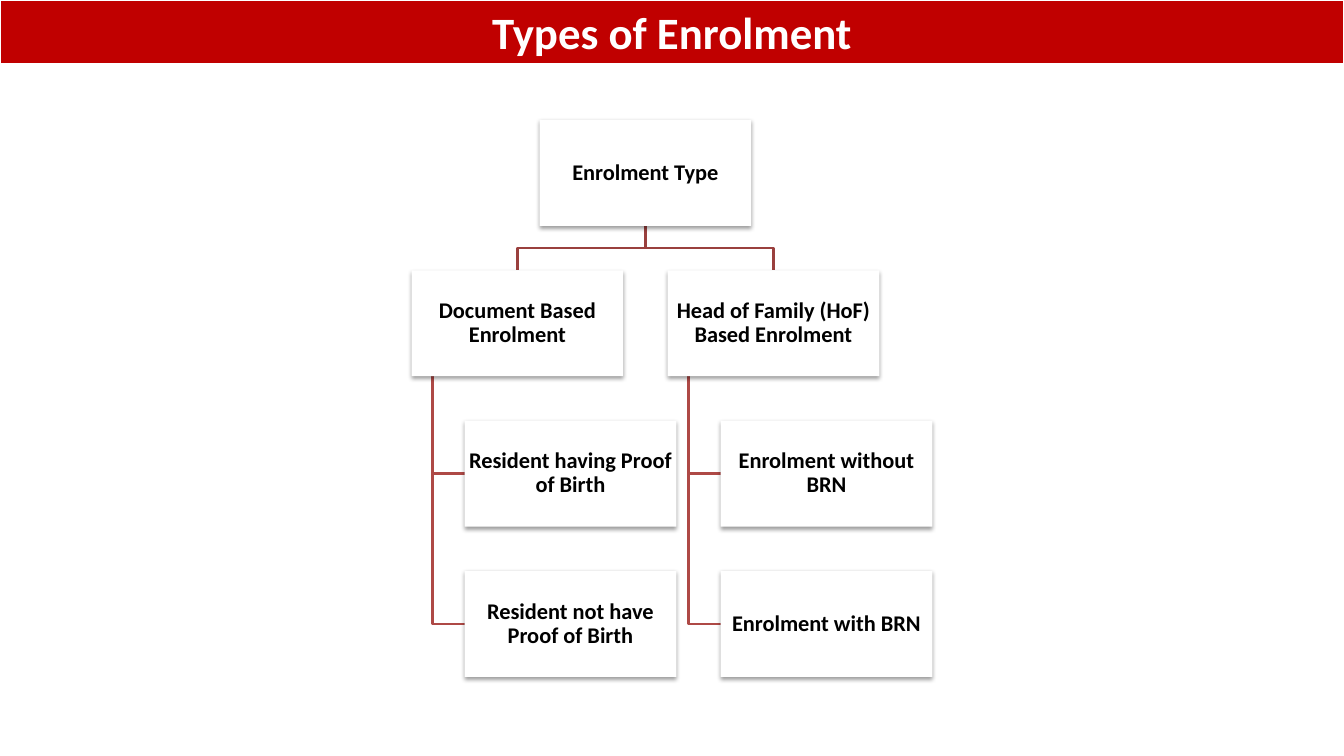
from lxml import etree
from pptx import Presentation
from pptx import util as u
from pptx.dml.color import RGBColor
from pptx.enum import shapes, text
from pptx.oxml import ns

WHITE = RGBColor(0xFF, 0xFF, 0xFF)
BLACK = RGBColor(0x00, 0x00, 0x00)
BANNER_RED = RGBColor(0xC0, 0x00, 0x00)
TOP_BRANCH = RGBColor(0x9A, 0x40, 0x3E)
SIDE_BRANCH = RGBColor(0xAE, 0x49, 0x46)

PAGE_WIDTH, PAGE_HEIGHT = 960, 540
BANNER_HEIGHT = 45.8
BOX_WIDTH, BOX_HEIGHT = 151.2, 75.6
TREE_LEFT, TREE_TOP = 294, 85.7
COLUMN_STEP, ROW_STEP = 182.9, 107.4
CHILD_INDENT = 37.9
STEM_INDENT = 15.1

ROOT = "Enrolment Type"
BRANCHES = [
    ("Document Based Enrolment",
     ["Resident having Proof of Birth", "Resident not have Proof of Birth"]),
    ("Head of Family (HoF) Based Enrolment",
     ["Enrolment without BRN", "Enrolment with BRN"]),
]


def row_top(row):
    return TREE_TOP + row * ROW_STEP


def write(box, words, *, size, color, spacing=1.0, margin=None):
    """Put one bold, centred paragraph in a shape."""
    frame = box.text_frame
    frame.word_wrap = True
    frame.auto_size = text.MSO_AUTO_SIZE.NONE
    frame.vertical_anchor = text.MSO_ANCHOR.MIDDLE
    if margin is not None:
        frame.margin_left = frame.margin_right = u.Pt(margin)
        frame.margin_top = frame.margin_bottom = u.Pt(margin)
    para = frame.paragraphs[0]
    para.alignment = text.PP_ALIGN.CENTER
    para.line_spacing = spacing
    span = para.add_run()
    span.text = words
    span.font.name = "Calibri"
    span.font.size = u.Pt(size)
    span.font.bold = True
    span.font.color.rgb = color


def add_banner(page, words):
    banner = page.shapes.title
    banner.left, banner.top = u.Pt(0), u.Pt(0)
    banner.width, banner.height = u.Pt(PAGE_WIDTH), u.Pt(BANNER_HEIGHT)
    banner.fill.solid()
    banner.fill.fore_color.rgb = BANNER_RED
    banner.line.color.rgb = WHITE
    banner.line.width = u.Pt(2)
    write(banner, words, size=32, color=WHITE)


def add_soft_shadow(box):
    box.shadow.inherit = False
    effects = box.element.spPr.find(ns.qn("a:effectLst"))
    shadow = etree.SubElement(
        effects, ns.qn("a:outerShdw"), blurRad=str(u.Pt(3.1)),
        dist=str(u.Pt(1.6)), dir="5400000", rotWithShape="0")
    color = etree.SubElement(shadow, ns.qn("a:srgbClr"), val=str(BLACK))
    etree.SubElement(color, ns.qn("a:alpha"), val="38000")


def add_node(page, words, left, row):
    box = page.shapes.add_shape(
        shapes.MSO_SHAPE.RECTANGLE, u.Pt(left), u.Pt(row_top(row)),
        u.Pt(BOX_WIDTH), u.Pt(BOX_HEIGHT))
    box.fill.solid()
    box.fill.fore_color.rgb = WHITE
    box.line.fill.background()
    add_soft_shadow(box)
    write(box, words, size=16, color=BLACK, spacing=0.9, margin=0.8)


def add_branch_line(page, points, color):
    """Draw an open bent line through points."""
    start, *rest = [(u.Pt(x), u.Pt(y)) for x, y in points]
    builder = page.shapes.build_freeform(*start)
    builder.add_line_segments(rest, close=False)
    line = builder.convert_to_shape()
    line.fill.background()
    line.line.color.rgb = color
    line.line.width = u.Pt(2)
    line.shadow.inherit = False


def add_branch(page, heading, children, left, root_center):
    center = left + BOX_WIDTH / 2
    root_bottom = row_top(0) + BOX_HEIGHT
    bend = (root_bottom + row_top(1)) / 2
    add_branch_line(page, [(root_center, root_bottom), (root_center, bend),
                           (center, bend), (center, row_top(1))], TOP_BRANCH)
    stem = left + STEM_INDENT
    child_left = left + CHILD_INDENT
    for row, child in enumerate(children, start=2):
        middle = row_top(row) + BOX_HEIGHT / 2
        add_branch_line(page, [(stem, row_top(1) + BOX_HEIGHT), (stem, middle),
                               (child_left, middle)], SIDE_BRANCH)
        add_node(page, child, child_left, row)
    add_node(page, heading, left, 1)


def main():
    deck = Presentation()
    deck.slide_width, deck.slide_height = u.Pt(PAGE_WIDTH), u.Pt(PAGE_HEIGHT)
    page = deck.slides.add_slide(deck.slide_layouts.get_by_name("Title Only"))
    add_banner(page, "Types of Enrolment")
    root_left = TREE_LEFT + COLUMN_STEP / 2
    for column, (heading, children) in enumerate(BRANCHES):
        add_branch(page, heading, children, TREE_LEFT + column * COLUMN_STEP,
                   root_left + BOX_WIDTH / 2)
    add_node(page, ROOT, root_left, 0)
    deck.save("out.pptx")


if __name__ == "__main__":
    main()
